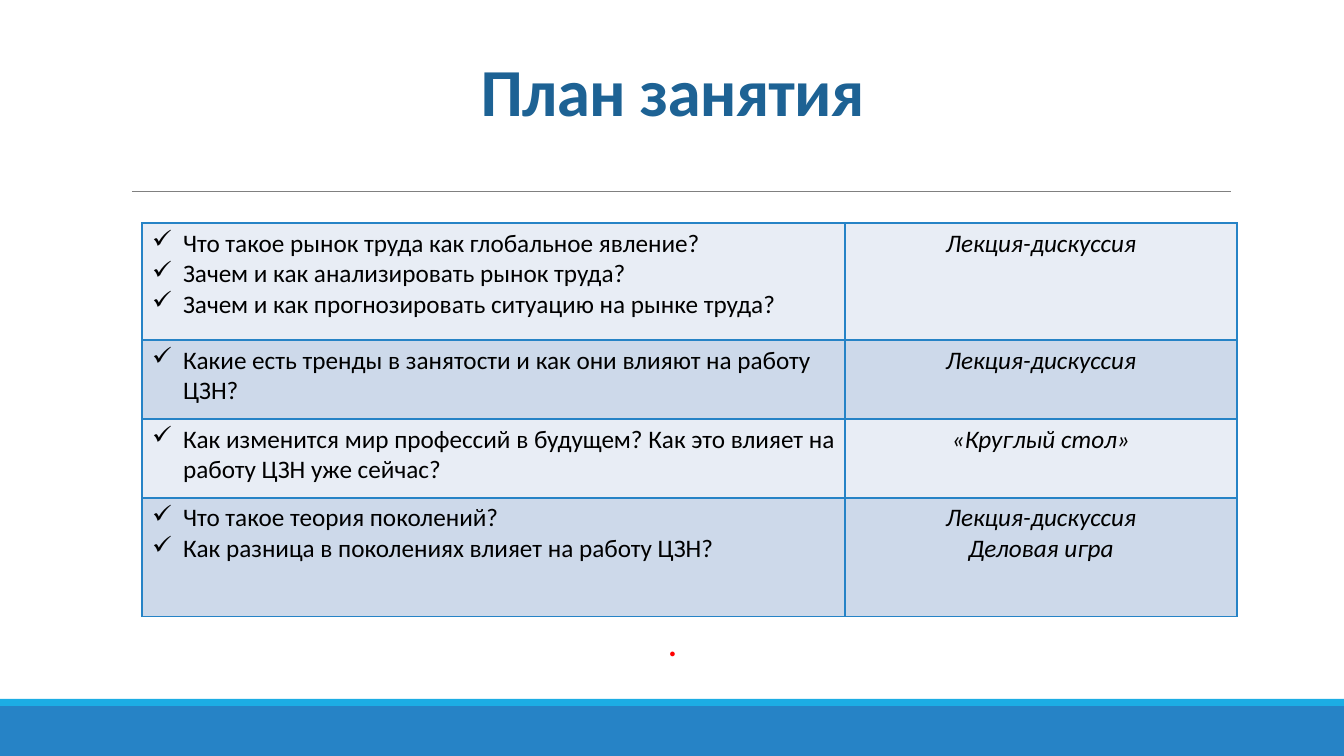
from dataclasses import dataclass

from lxml import etree
from pptx import Presentation
from pptx.dml.color import RGBColor
from pptx.enum.shapes import MSO_CONNECTOR, MSO_SHAPE
from pptx.enum.text import MSO_ANCHOR, PP_ALIGN
from pptx.oxml.ns import qn
from pptx.util import Emu, Pt

RECTANGLE = MSO_SHAPE.RECTANGLE
STRAIGHT = MSO_CONNECTOR.STRAIGHT
TOP, BOTTOM = MSO_ANCHOR.TOP, MSO_ANCHOR.BOTTOM
LEFT, CENTER = PP_ALIGN.LEFT, PP_ALIGN.CENTER

BLUE = RGBColor(0x26, 0x83, 0xC6)
CYAN = RGBColor(0x1C, 0xAD, 0xE4)
NAVY = RGBColor(0x1D, 0x62, 0x94)
GRAY = RGBColor(0x80, 0x80, 0x80)
RED = RGBColor(0xFF, 0x00, 0x00)
BLACK = RGBColor(0x00, 0x00, 0x00)
BANDS = (RGBColor(0xE8, 0xED, 0xF5), RGBColor(0xCD, 0xD9, 0xEA))

FONT = "Calibri"
SCALE = 914400 / 100.8
BULLET_INDENT = 31
TABLE_LEFT, TABLE_TOP = 142, 223
COLUMN_WIDTHS = (703, 392)


@dataclass(frozen=True)
class Box:
    """A rectangle in px."""

    left: int
    top: int
    width: int
    height: int


@dataclass(frozen=True)
class Bar:
    """A filled band of the footer."""

    box: Box
    color: RGBColor


@dataclass(frozen=True)
class Label:
    """A centred line of text."""

    text: str
    box: Box
    size: int
    color: RGBColor
    bold: bool
    anchor: MSO_ANCHOR
    line_spacing: float
    tracking: int


@dataclass(frozen=True)
class PlanRow:
    """Questions of the lesson and the formats they are taught in."""

    height: int
    questions: tuple[str, ...]
    formats: tuple[str, ...]


BARS = (
    Bar(Box(0, 706, 1344, 50), BLUE),
    Bar(Box(0, 699, 1344, 7), CYAN),
)
LABELS = (
    Label("План занятия", Box(219, 46, 907, 89), 48, NAVY, True, BOTTOM, 0.85, -50),
    Label(".", Box(219, 612, 907, 56), 28, RED, False, TOP, 1.0, 0),
)
PLAN = (
    PlanRow(
        117,
        (
            "Что такое рынок труда как глобальное явление?",
            "Зачем и как анализировать рынок труда?",
            "Зачем и как прогнозировать ситуацию на рынке труда?",
        ),
        ("Лекция-дискуссия",),
    ),
    PlanRow(
        79,
        ("Какие есть тренды в занятости и как они влияют на работу ЦЗН?",),
        ("Лекция-дискуссия",),
    ),
    PlanRow(
        79,
        ("Как изменится мир профессий в будущем? Как это влияет на работу ЦЗН уже сейчас?",),
        ("«Круглый стол»",),
    ),
    PlanRow(
        119,
        ("Что такое теория поколений?", "Как разница в поколениях влияет на работу ЦЗН?"),
        ("Лекция-дискуссия", "Деловая игра"),
    ),
)


def px(value: int) -> Emu:
    """Turn px into EMU."""
    return Emu(round(value * SCALE))


def place(box: Box) -> tuple[Emu, Emu, Emu, Emu]:
    """Give the position and size of a box in EMU."""
    return px(box.left), px(box.top), px(box.width), px(box.height)


def style_font(font, size: int, color: RGBColor, bold=False, italic=False) -> None:
    """Set the face, size, colour and style of a font."""
    font.name, font.size = FONT, Pt(size)
    font.bold, font.italic = bold, italic
    font.color.rgb = color


def add_bar(shapes, bar: Bar) -> None:
    """Draw a footer band."""
    sp = shapes.add_shape(RECTANGLE, *place(bar.box))
    sp.shadow.inherit = False
    sp.fill.solid()
    sp.fill.fore_color.rgb = bar.color
    sp.line.fill.background()


def add_rule(shapes) -> None:
    """Draw the thin line under the title."""
    line = shapes.add_connector(STRAIGHT, px(132), px(191), px(1231), px(191))
    line.line.color.rgb = GRAY
    line.line.width = Pt(0.5)
    etree.SubElement(line._element.spPr, qn("a:effectLst"))


def add_label(shapes, label: Label) -> None:
    """Draw a centred line of text."""
    tf = shapes.add_textbox(*place(label.box)).text_frame
    tf.word_wrap = True
    tf.vertical_anchor = label.anchor
    p = tf.paragraphs[0]
    p.text = label.text
    p.alignment = CENTER
    p.line_spacing = label.line_spacing
    r = p.runs[0]
    style_font(r.font, label.size, label.color, label.bold)
    r._r.get_or_add_rPr().set("spc", str(label.tracking))


def add_check(p) -> None:
    """Give a paragraph a check-mark bullet."""
    pPr = p._p.get_or_add_pPr()
    pPr.set("marL", str(px(BULLET_INDENT)))
    pPr.set("indent", str(-px(BULLET_INDENT)))
    etree.SubElement(pPr, qn("a:buChar"), char="✓")


def fill_cell(cell, lines: tuple[str, ...], band: RGBColor, checked: bool) -> None:
    """Write, border and fill a table cell."""
    cell.text_frame.text = "\n".join(lines)
    for p in cell.text_frame.paragraphs:
        p.alignment = LEFT if checked else CENTER
        style_font(p.runs[0].font, 18, BLACK, italic=not checked)
        if checked:
            add_check(p)
    tcPr = cell._tc.get_or_add_tcPr()
    for side in ("a:lnL", "a:lnR", "a:lnT", "a:lnB"):
        ln = etree.SubElement(tcPr, qn(side), w=str(Pt(1)))
        fill = etree.SubElement(ln, qn("a:solidFill"))
        etree.SubElement(fill, qn("a:srgbClr"), val=str(BLUE))
    cell.fill.solid()
    cell.fill.fore_color.rgb = band


def add_plan(shapes) -> None:
    """Draw the table of the lesson plan."""
    box = Box(TABLE_LEFT, TABLE_TOP, sum(COLUMN_WIDTHS), sum(row.height for row in PLAN))
    table = shapes.add_table(len(PLAN), len(COLUMN_WIDTHS), *place(box)).table
    table.first_row = False
    for column, width in zip(table.columns, COLUMN_WIDTHS):
        column.width = px(width)
    for i, row in enumerate(PLAN):
        table.rows[i].height = px(row.height)
        band = BANDS[i % len(BANDS)]
        fill_cell(table.cell(i, 0), row.questions, band, True)
        fill_cell(table.cell(i, 1), row.formats, band, False)


def main() -> None:
    """Build and save the slide."""
    prs = Presentation()
    prs.slide_width, prs.slide_height = px(1344), px(756)
    s = prs.slides.add_slide(prs.slide_layouts[6])
    for bar in BARS:
        add_bar(s.shapes, bar)
    add_rule(s.shapes)
    for label in LABELS:
        add_label(s.shapes, label)
    add_plan(s.shapes)
    prs.save("out.pptx")


if __name__ == "__main__":
    main()
